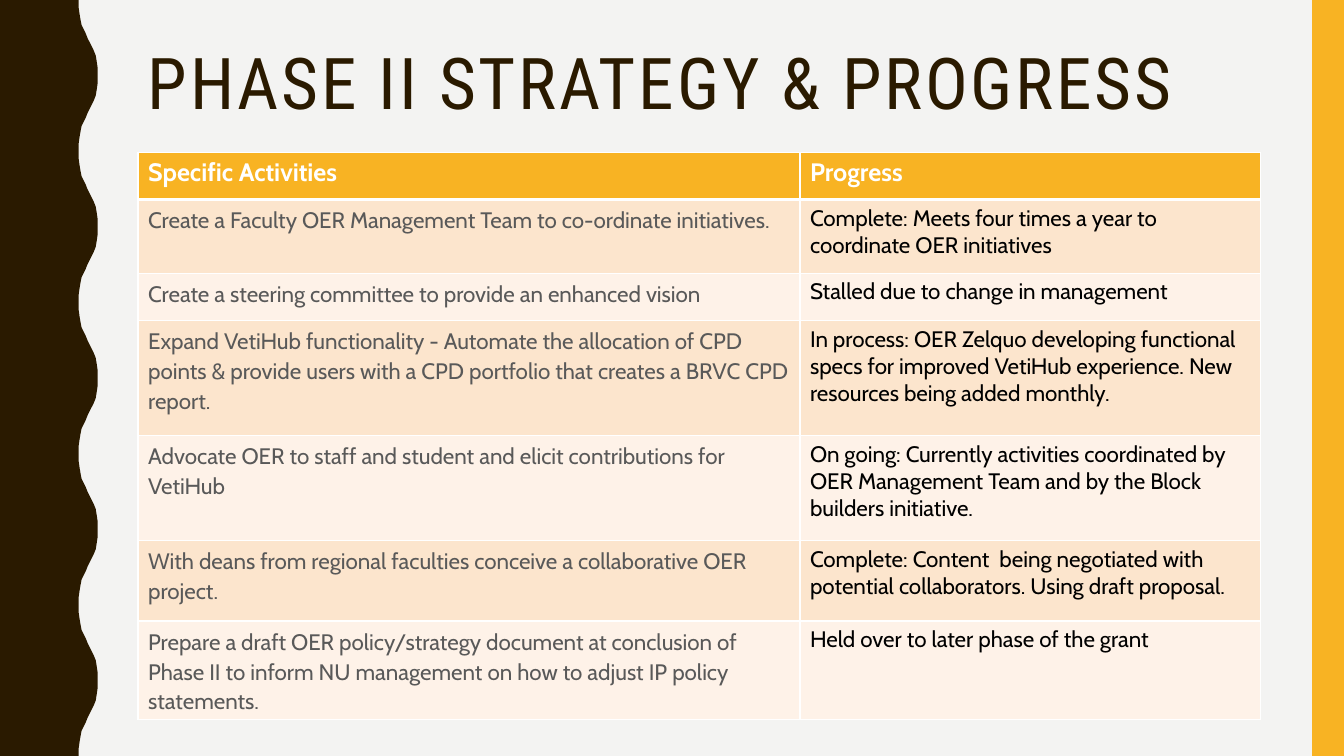
"""Build the Phase II strategy and progress slide."""
import pptx
import pptx.dml.color
import pptx.enum.shapes
import pptx.oxml.ns
import pptx.util
from lxml import etree

Cm = pptx.util.Cm
Pt = pptx.util.Pt
BROWN, AMBER, WHITE, GREY, BLACK = "2A1A00", "F8B323", "FFFFFF", "595959", "000000"
BANDS = ["FCE5CD", "FEF2E8"]


def color(hex_string):
    return pptx.dml.color.RGBColor.from_string(hex_string)


def write(frame, text, size, font, ink, bold=False, spacing=None, before=0, tracking=0):
    frame.word_wrap = True
    para = frame.paragraphs[0]
    para.line_spacing = spacing
    para.space_before = Pt(before)
    span = para.add_run()
    span.text = text
    span.font.size = Pt(size)
    span.font.name = font
    span.font.bold = bold
    span.font.color.rgb = color(ink)
    if tracking:
        span.font._element.set("spc", str(tracking * 100))


deck = pptx.Presentation()
deck.slide_width, deck.slide_height = Cm(33.87), Cm(19.05)
page = deck.slides.add_slide(deck.slide_layouts[6])
page.background.fill.solid()
page.background.fill.fore_color.rgb = color("F3F3F2")

# Wave units are hundredths of an inch; each 150-unit period mirrors its first half.
half_wave = [(78, 0), (78, 7), (79, 14), (80, 20), (81, 25), (83, 29), (85, 33), (87, 38),
             (89, 42), (91, 46), (93, 50), (95, 55), (96, 61), (97, 68), (97, 75)]
wave = half_wave + [(x, 150 - y) for x, y in reversed(half_wave[:-1])]
edge = [(x, y + 150 * period) for period in range(5) for x, y in wave]
outline = page.shapes.build_freeform(0, 0, scale=Cm(2.54) / 100)
outline.add_line_segments(edge + [(0, 750)], close=True)
wavy_band = outline.convert_to_shape()
side_bar = page.shapes.add_shape(
    pptx.enum.shapes.MSO_SHAPE.RECTANGLE, Cm(33.07), Cm(0), Cm(0.8), Cm(19.05))
for shape, fill in [(wavy_band, BROWN), (side_bar, AMBER)]:
    shape.shadow.inherit = False
    shape.fill.solid()
    shape.fill.fore_color.rgb = color(fill)
    shape.line.fill.background()

title = page.shapes.add_textbox(Cm(3.48), Cm(1.07), Cm(28.28), Cm(4.14))
write(title.text_frame, "PHASE II STRATEGY & PROGRESS", 51, "Roboto Condensed", BROWN,
      spacing=0.9, tracking=2)

rows = [
    ("Specific Activities", "Progress", 1.19),
    ("Create a Faculty OER Management Team to co-ordinate initiatives.",
     "Complete: Meets four times a year to coordinate OER initiatives", 1.86),
    ("Create a steering committee to provide an enhanced vision",
     "Stalled due to change in management", 1.19),
    ("Expand VetiHub functionality - Automate the allocation of CPD points & provide "
     "users with a CPD portfolio that creates a BRVC CPD report.",
     "In process: OER Zelquo developing functional specs for improved VetiHub "
     "experience. New resources being added monthly.", 2.9),
    ("Advocate OER to staff and student and elicit contributions for VetiHub",
     "On going: Currently activities coordinated by OER Management Team and by the "
     "Block builders initiative.", 2.64),
    ("With deans from regional faculties conceive a collaborative OER project.",
     "Complete: Content  being negotiated with potential collaborators. "
     "Using draft proposal.", 2.03),
    ("Prepare a draft OER policy/strategy document at conclusion of Phase II to inform "
     "NU management on how to adjust IP policy statements.",
     "Held over to later phase of the grant", 2.03),
]
table = page.shapes.add_table(
    len(rows), 2, Cm(3.48), Cm(3.84), Cm(28.28), Cm(13.84)).table
table.columns[0].width, table.columns[1].width = Cm(16.68), Cm(11.6)

for row_index, (activity, progress, height) in enumerate(rows):
    table.rows[row_index].height = Cm(height)
    header = row_index == 0
    for column_index, text in enumerate([activity, progress]):
        cell = table.cell(row_index, column_index)
        if header:
            write(cell.text_frame, text, 18, "Cabin", WHITE, bold=True)
        elif column_index == 0:
            write(cell.text_frame, text, 16, "Cabin", GREY, spacing=1.1, before=7)
        else:
            write(cell.text_frame, text, 16, "Cabin", BLACK)
        properties = cell._tc.get_or_add_tcPr()
        for side in ["lnL", "lnR", "lnT", "lnB"]:
            thick = (header and side == "lnB") or (row_index == 1 and side == "lnT")
            border = etree.SubElement(properties, pptx.oxml.ns.qn("a:" + side),
                                      w=str(Pt(3 if thick else 1)))
            paint = etree.SubElement(border, pptx.oxml.ns.qn("a:solidFill"))
            etree.SubElement(paint, pptx.oxml.ns.qn("a:srgbClr"), val=WHITE)
        cell.fill.solid()
        cell.fill.fore_color.rgb = color(AMBER if header else BANDS[(row_index - 1) % 2])

deck.save("out.pptx")
